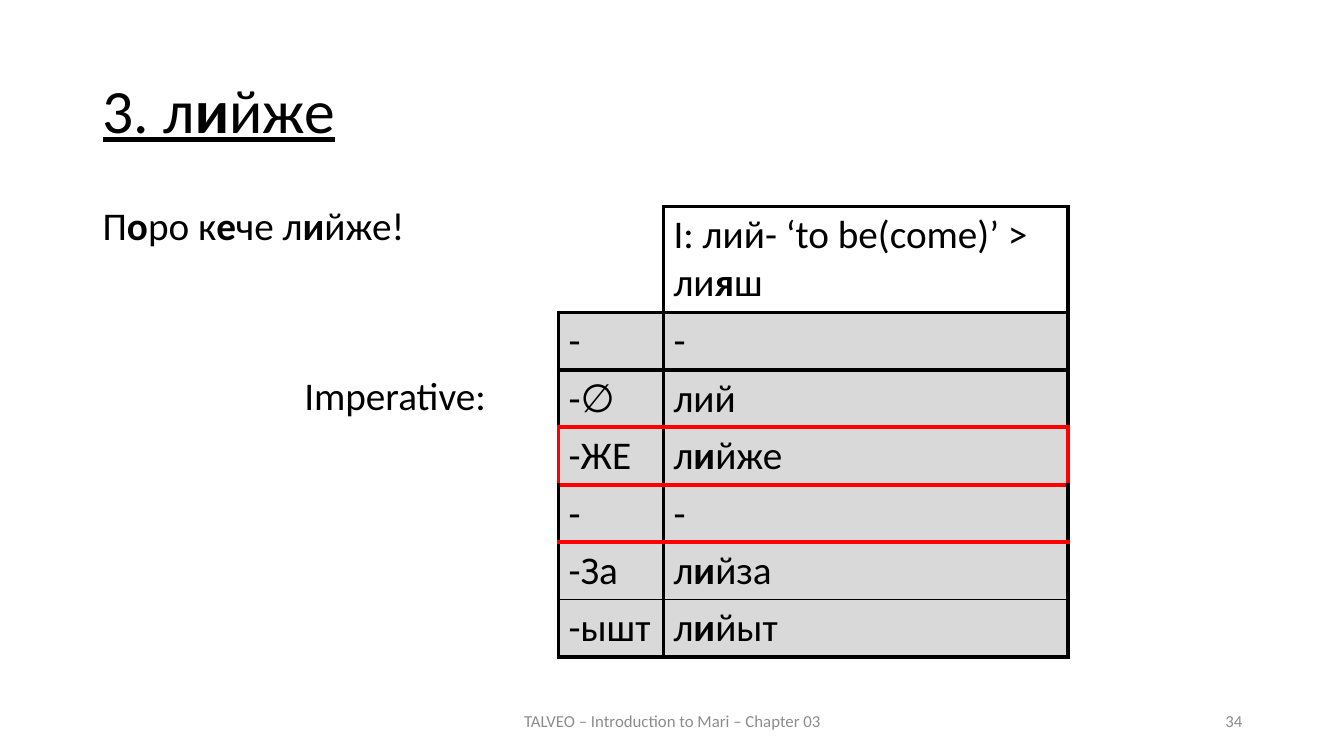
from lxml import etree
from pptx import Presentation
from pptx.dml.color import RGBColor
from pptx.enum.text import MSO_ANCHOR, PP_ALIGN
from pptx.oxml.ns import qn
from pptx.util import Inches, Pt

# Content: letters between asterisks are stressed and set in bold
TITLE = "3. л*и*йже"
GREETING = "П*о*ро к*е*че л*и*йже!"
MOOD = "Imperative:"
FOOTER = "TALVEO – Introduction to Mari – Chapter 03"
PAGE = "34"
HEADING = ["I: лий- ‘to be(come)’ >", "ли*я*ш"]
FORMS = [
    ("-", "-"),
    ("-∅", "лий"),
    ("-ЖЕ", "л*и*йже"),
    ("-", "-"),
    ("-За", "л*и*йза"),
    ("-ышт", "л*и*йыт"),
]
BLACK, RED, GREY, WHITE, MUTED = "000000", "FF0000", "D9D9D9", "FFFFFF", "8C8C8C"
HIGHLIGHT = 3  # table row with red sides
THICK, THIN = (BLACK, 3), (BLACK, 1)
MARKED = (RED, 3)
# Horizontal rules from the top of the heading to the foot of the table
RULES = [THICK, THICK, THICK, MARKED, MARKED, MARKED, THIN, THICK]
COLUMNS = [1.04, 4.01]
HEADING_HEIGHT, FORM_HEIGHT = 1.05, 0.57


def color(value):
    return RGBColor.from_string(value)


def write(paragraph, marked, size, tint=BLACK):
    paragraph.font.name = "Calibri"
    paragraph.font.size = Pt(size)
    paragraph.font.color.rgb = color(tint)
    for i, part in enumerate(marked.split("*")):
        if part:
            run = paragraph.add_run()
            run.text = part
            if i % 2:
                run.font.bold = True


def add_frame(left, top, width, height, anchor=MSO_ANCHOR.MIDDLE):
    box = slide.shapes.add_textbox(Inches(left), Inches(top), Inches(width), Inches(height))
    frame = box.text_frame
    frame.word_wrap = True
    frame.vertical_anchor = anchor
    return frame


def set_borders(cell, **sides):
    properties = cell._tc.get_or_add_tcPr()
    for side in "LRTB":
        rule = sides[side]
        line = etree.SubElement(properties, qn(f"a:ln{side}"))
        if rule is None:
            etree.SubElement(line, qn("a:noFill"))
            continue
        tint, points = rule
        line.set("w", str(Pt(points)))
        solid = etree.SubElement(line, qn("a:solidFill"))
        etree.SubElement(solid, qn("a:srgbClr"), val=tint)


prs = Presentation()
prs.slide_width, prs.slide_height = Inches(13.33), Inches(7.5)
slide = prs.slides.add_slide(prs.slide_layouts[6])

# Title
title = add_frame(0.92, 0.4, 11.5, 1.45).paragraphs[0]
write(title, TITLE, 44)
title.font.underline = True
title.line_spacing = 0.9

# Footer and page number
for text, left, width, align in [
    (FOOTER, 4.42, 4.5, PP_ALIGN.CENTER),
    (PAGE, 9.42, 3, PP_ALIGN.RIGHT),
]:
    note = add_frame(left, 6.95, width, 0.4).paragraphs[0]
    write(note, text, 12, MUTED)
    note.alignment = align

# Greeting, and the mood label level with the table's second form
body = add_frame(0.92, 2, 11.5, 4.76, MSO_ANCHOR.TOP)
greeting, mood = body.paragraphs[0], body.add_paragraph()
for paragraph, text, gap in [(greeting, GREETING, 10), (mood, MOOD, 91)]:
    write(paragraph, text, 28)
    paragraph.line_spacing = 0.9
    paragraph.space_before = Pt(gap)
mood._p.get_or_add_pPr().set("marL", str(Inches(2)))

# Imperative table
rows = [([], HEADING)] + [([suffix], [form]) for suffix, form in FORMS]
heights = [HEADING_HEIGHT] + [FORM_HEIGHT] * len(FORMS)
table = slide.shapes.add_table(
    len(rows), len(COLUMNS), Inches(5.54), Inches(2.05),
    Inches(sum(COLUMNS)), Inches(sum(heights)),
).table
table.first_row = table.horz_banding = False
for column, width in zip(table.columns, COLUMNS):
    column.width = Inches(width)

for r, (row, height) in enumerate(zip(rows, heights)):
    table.rows[r].height = Inches(height)
    outer = MARKED if r == HIGHLIGHT else THICK
    for c, lines in enumerate(row):
        cell = table.cell(r, c)
        corner = r == 0 and c == 0
        set_borders(
            cell,
            L=None if corner else (outer, THICK)[c],
            R=(THICK, outer)[c],
            T=None if corner else RULES[r],
            B=RULES[r + 1],
        )
        if corner:
            cell.fill.background()
        else:
            cell.fill.solid()
            cell.fill.fore_color.rgb = color(GREY if r else WHITE)
        for i, line in enumerate(lines):
            frame = cell.text_frame
            write(frame.add_paragraph() if i else frame.paragraphs[0], line, 28)

prs.save("out.pptx")
